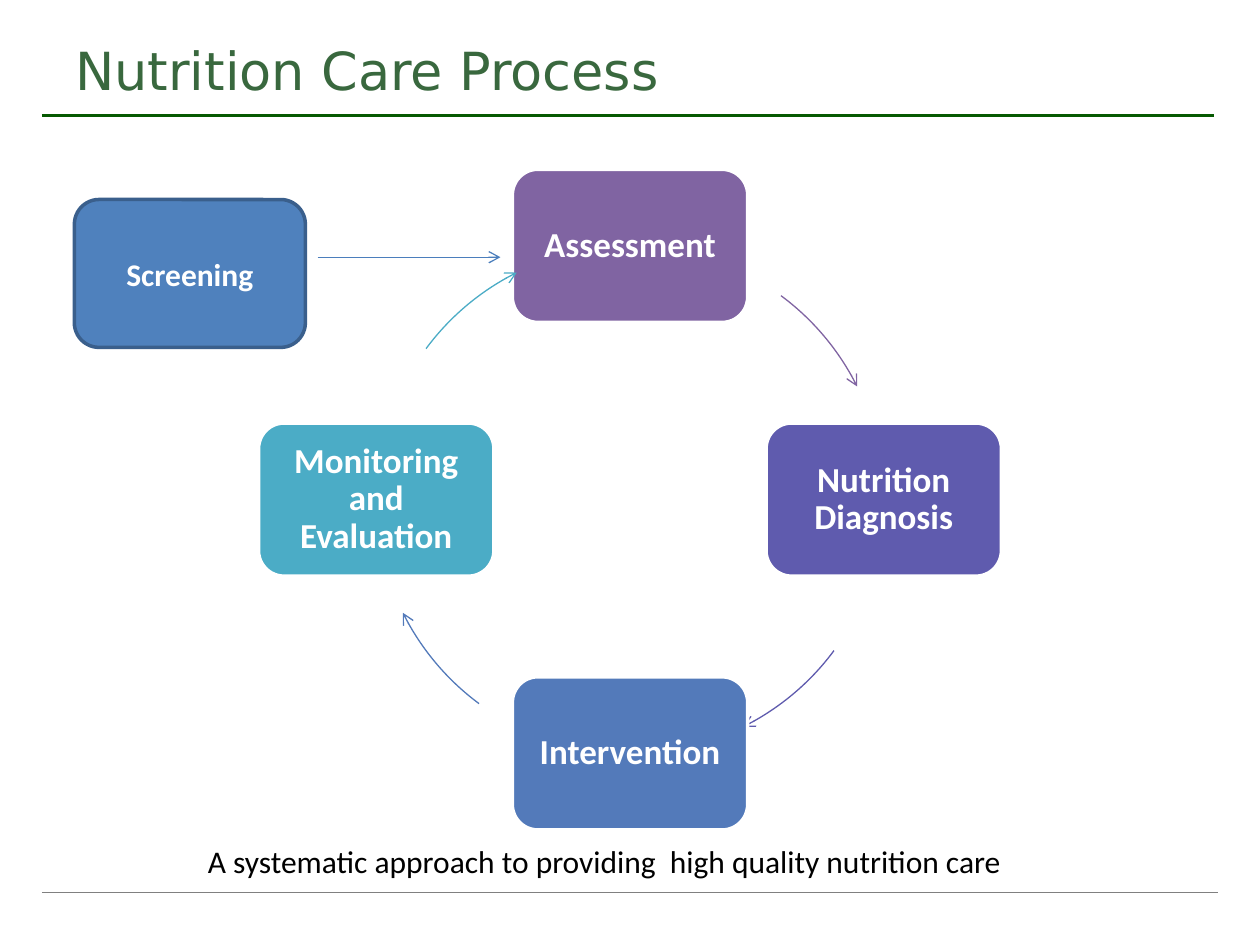
from lxml import etree
from pptx import Presentation
from pptx.dml.color import RGBColor
from pptx.enum.shapes import MSO_CONNECTOR, MSO_SHAPE
from pptx.enum.text import MSO_ANCHOR, PP_ALIGN
from pptx.oxml.ns import qn
from pptx.util import Pt

ARC, ROUNDED = MSO_SHAPE.ARC, MSO_SHAPE.ROUNDED_RECTANGLE
STRAIGHT = MSO_CONNECTOR.STRAIGHT
MIDDLE, TOP = MSO_ANCHOR.MIDDLE, MSO_ANCHOR.TOP
LEFT, CENTER = PP_ALIGN.LEFT, PP_ALIGN.CENTER

WHITE = RGBColor(0xFF, 0xFF, 0xFF)
BLACK = RGBColor(0, 0, 0)
GREY = RGBColor(0x80, 0x80, 0x80)
RULE_GREEN = RGBColor(0x06, 0x59, 0x01)
TITLE_GREEN = RGBColor(0x39, 0x68, 0x3E)
PURPLE = RGBColor(0x80, 0x64, 0xA2)
INDIGO = RGBColor(0x5F, 0x5B, 0xAE)
BLUE = RGBColor(0x53, 0x7A, 0xBA)
TEAL = RGBColor(0x4B, 0xAC, 0xC6)
SCREEN_BLUE = RGBColor(0x4F, 0x81, 0xBD)
SCREEN_EDGE = RGBColor(0x3A, 0x5F, 0x8C)
ARROW_BLUE = RGBColor(0x4B, 0x7E, 0xBC)


def write(shape, text, align, anchor, font):
    """Put one formatted paragraph into a shape and return it."""
    tf = shape.text_frame
    tf.word_wrap = True
    tf.vertical_anchor = anchor
    p = tf.paragraphs[0]
    p.alignment = align
    r = p.add_run()
    r.text = text
    font = dict(font)
    r.font.color.rgb = font.pop("color")
    for name, value in font.items():
        setattr(r.font, name, value)
    return p


def stroke(shape, color, width, arrow=False):
    """Set the line of a shape or connector, with an optional arrowhead."""
    shape.line.color.rgb = color
    shape.line.width = Pt(width)
    if arrow:
        ln = shape.line._get_or_add_ln()
        etree.SubElement(ln, qn("a:tailEnd"), type="arrow")


prs = Presentation()
prs.slide_width, prs.slide_height = Pt(720), Pt(540)
s = prs.slides.add_slide(prs.slide_layouts[6])

# Footer rule, title rule and the arrow from Screening to Assessment
for x1, x2, y, color, width, arrow in (
    (24, 696, 510, GREY, 1, False),
    (24, 693.5, 66, RULE_GREEN, 2.25, False),
    (181.5, 286, 147, ARROW_BLUE, 0.75, True),
):
    line = s.shapes.add_connector(STRAIGHT, Pt(x1), Pt(y), Pt(x2), Pt(y))
    stroke(line, color, width, arrow)
    etree.SubElement(line._element.spPr, qn("a:effectLst"))

# Title
sp = s.shapes.add_textbox(Pt(36), Pt(8), Pt(574), Pt(63.5))
write(sp, "Nutrition Care Process", LEFT, MIDDLE,
      {"size": Pt(30), "name": "DejaVu Sans", "color": TITLE_GREEN})

# Cycle: steps clockwise from the top, each followed by an arc arrow
CX, CY, RADIUS = 360, 285.5, 145
BOX_W, BOX_H = 134.5, 87.5
ARC_START, ARC_SWEEP = 306.5, 27
ARC_UNIT = 0.6  # adjustment value of one degree
steps = (
    ("Assessment", PURPLE, 0, -1),
    ("Nutrition Diagnosis", INDIGO, 1, 0),
    ("Intervention", BLUE, 0, 1),
    ("Monitoring and Evaluation", TEAL, -1, 0),
)
step_font = {"size": Pt(20), "name": "Calibri", "bold": True, "color": WHITE}
for i, (text, color, dx, dy) in enumerate(steps):
    sp = s.shapes.add_shape(
        ROUNDED, Pt(CX + dx * RADIUS - BOX_W / 2),
        Pt(CY + dy * RADIUS - BOX_H / 2), Pt(BOX_W), Pt(BOX_H))
    sp.shadow.inherit = False
    sp.fill.solid()
    sp.fill.fore_color.rgb = color
    stroke(sp, WHITE, 2)
    p = write(sp, text, CENTER, MIDDLE, step_font)
    p.line_spacing = 0.9
    for side in ("left", "right", "top", "bottom"):
        setattr(sp.text_frame, f"margin_{side}", Pt(6))

    arc = s.shapes.add_shape(ARC, Pt(CX - RADIUS), Pt(CY - RADIUS),
                             Pt(2 * RADIUS), Pt(2 * RADIUS))
    arc.shadow.inherit = False
    arc.fill.background()
    start = (ARC_START + 90 * i) % 360
    arc.adjustments[0] = start * ARC_UNIT
    arc.adjustments[1] = (start + ARC_SWEEP) * ARC_UNIT
    stroke(arc, color, 0.75, True)

# Screening, the step before the cycle
sp = s.shapes.add_shape(ROUNDED, Pt(42.5), Pt(114), Pt(132), Pt(84.5))
sp.shadow.inherit = False
sp.fill.solid()
sp.fill.fore_color.rgb = SCREEN_BLUE
stroke(sp, SCREEN_EDGE, 2)
write(sp, "Screening", CENTER, MIDDLE, {**step_font, "size": Pt(18)})

# Caption
sp = s.shapes.add_textbox(Pt(108.5), Pt(477.5), Pt(474), Pt(29))
write(sp, "A systematic approach to providing  high quality nutrition care",
      CENTER, TOP, {"size": Pt(18), "name": "Calibri", "color": BLACK})
sp.text_frame.word_wrap = False

prs.save("out.pptx")
